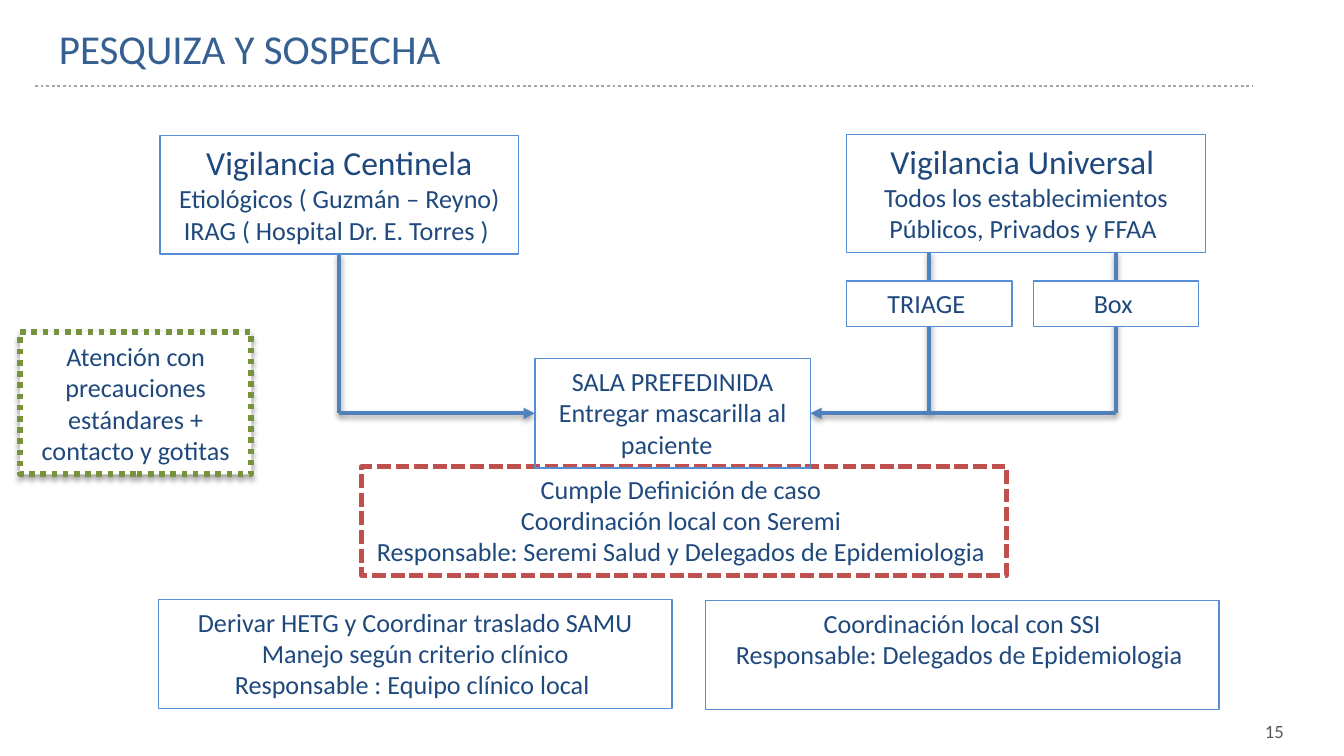
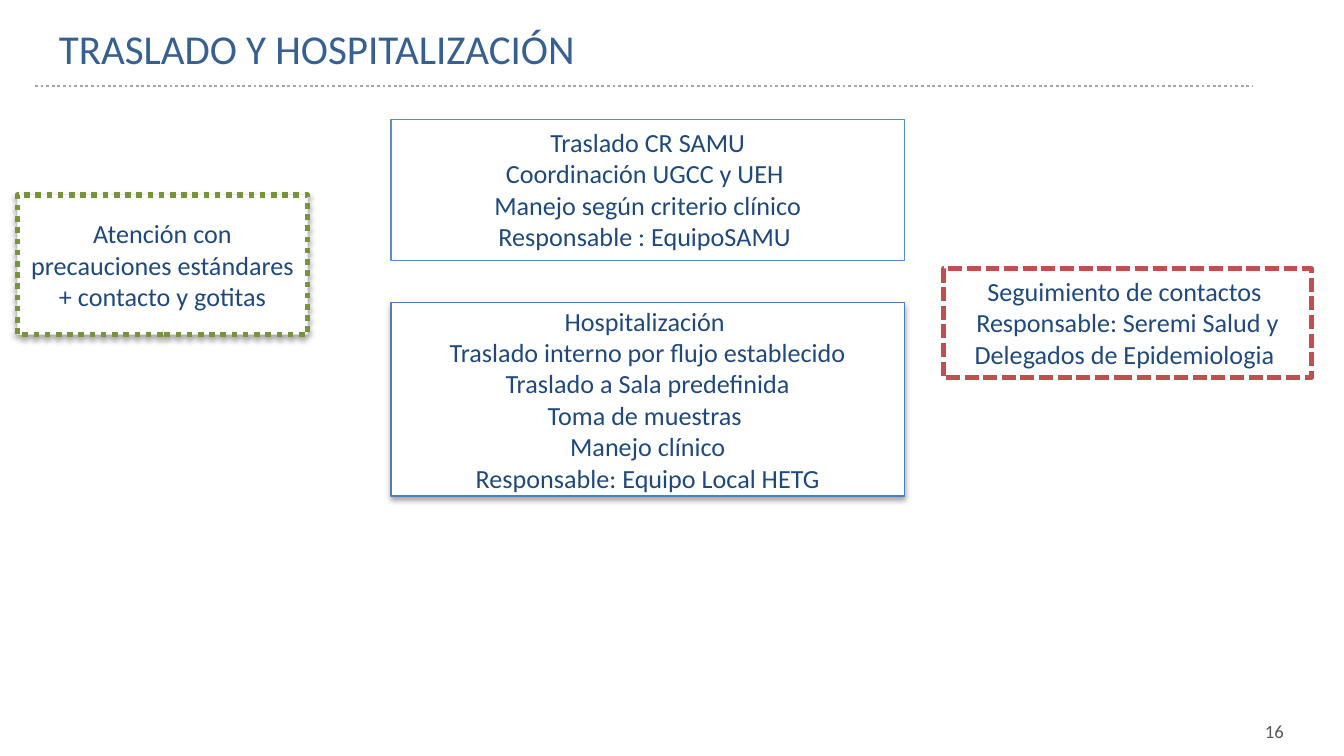
from lxml.etree import SubElement
from pptx import Presentation
from pptx.dml.color import RGBColor
from pptx.enum.dml import MSO_LINE_DASH_STYLE as Dash
from pptx.enum.shapes import MSO_CONNECTOR, MSO_SHAPE
from pptx.enum.text import MSO_ANCHOR as Anchor, PP_ALIGN as Align
from pptx.oxml.ns import qn
from pptx.util import Inches, Pt

WHITE = RGBColor(0xFF, 0xFF, 0xFF)
NAVY = RGBColor(0x1F, 0x49, 0x7D)
TITLE_BLUE = RGBColor(0x37, 0x60, 0x92)
STEP_BLUE = RGBColor(0x55, 0x8E, 0xD5)
WARD_BLUE = RGBColor(0x4B, 0x7E, 0xBC)
FLOW_BLUE = RGBColor(0x4F, 0x81, 0xBD)
GREEN = RGBColor(0x77, 0x93, 0x3C)
RED = RGBColor(0xC0, 0x50, 0x4D)
RULE_GREY = RGBColor(0xA6, 0xA6, 0xA6)
NUMBER_GREY = RGBColor(0x59, 0x59, 0x59)

FONT = "Calibri"
COLUMNS, ROWS = 100, 56.25
UNIT = Inches(10) / COLUMNS
HEAD, BODY = 18, 14
LEADING = 1.22

KINDS = {
    "step": (STEP_BLUE, 0.75, None, None, 0, Anchor.TOP),
    "place": (STEP_BLUE, 0.75, None, WHITE, 0, Anchor.TOP),
    "case": (RED, 2.5, Dash.SQUARE_DOT, None, 0, Anchor.TOP),
    "ward": (WARD_BLUE, 0.75, None, WHITE, 35, Anchor.MIDDLE),
    "care": (GREEN, 3, Dash.ROUND_DOT, WHITE, 35, Anchor.MIDDLE),
}

PRECAUTIONS = ["Atención con precauciones estándares + contacto y gotitas"]
SEREMI = "Responsable: Seremi Salud y Delegados de Epidemiologia "
CLINICAL = "Manejo según criterio clínico"


def text_height(body_lines, head_lines=0):
    points = LEADING * (BODY * body_lines + HEAD * head_lines)
    return 1 + points / 7.2


SURVEILLANCE = text_height(2, 1)
ONE, THREE, FOUR = (text_height(n) for n in (1, 3, 4))

DETECTION = {
    "centinela": ("step", 11.9, 10.1, 26.7, SURVEILLANCE, [
        "Vigilancia Centinela", "Etiológicos ( Guzmán – Reyno)",
        "IRAG ( Hospital Dr. E. Torres ) "]),
    "universal": ("step", 63, 10, 26.7, SURVEILLANCE, [
        "Vigilancia Universal ", "Todos los establecimientos",
        "Públicos, Privados y FFAA "]),
    "caso": ("case", 26.9, 34.7, 48, THREE, [
        "Cumple Definición de caso ", "Coordinación local con Seremi ", SEREMI]),
    "sala": ("step", 39.8, 26.7, 20.5, THREE, [
        "SALA PREFEDINIDA", "Entregar mascarilla al paciente  "]),
    "triage": ("place", 63, 20.9, 12.3, ONE, ["TRIAGE "]),
    "box": ("place", 76.9, 20.9, 12.3, ONE, ["Box "]),
    "derivar": ("step", 11.8, 44.6, 38.2, THREE, [
        "Derivar HETG y Coordinar traslado SAMU", CLINICAL,
        "Responsable : Equipo clínico local "]),
    "ssi": ("step", 52.5, 44.7, 38.2, THREE, [
        "Coordinación local con SSI", "Responsable: Delegados de Epidemiologia "]),
    "atencion": ("care", 1.5, 24.7, 17.2, 10.6, PRECAUTIONS),
}
TRANSFER = {
    "traslado": ("step", 29.1, 8.9, 38.2, FOUR, [
        "Traslado CR SAMU", "Coordinación UGCC y UEH ", CLINICAL,
        "Responsable : EquipoSAMU "]),
    "hospital": ("ward", 29.1, 22.5, 38.2, 14.4, [
        "Hospitalización ", "Traslado interno por flujo establecido",
        "Traslado a Sala predefinida", "Toma de muestras ", "Manejo clínico",
        "Responsable: Equipo Local HETG"]),
    "atencion": ("care", 1.3, 14.5, 21.6, 10.4, PRECAUTIONS),
    "contactos": ("case", 70.2, 20, 27.4, THREE, [
        "Seguimiento de contactos ", SEREMI]),
}
SLIDES = [
    (15, "PESQUIZA Y SOSPECHA", DETECTION),
    (16, "TRASLADO Y HOSPITALIZACIÓN", TRANSFER),
]


def grid(*lengths):
    return [round(length * UNIT) for length in lengths]


def write(shape, paragraphs, size, color, align, anchor):
    frame = shape.text_frame
    frame.word_wrap = True
    frame.vertical_anchor = anchor
    frame.text = "\n".join(paragraphs)
    for paragraph in frame.paragraphs:
        paragraph.alignment = align
        paragraph.font.name = FONT
        paragraph.font.size = Pt(size)
        paragraph.font.color.rgb = color
    return frame


def set_effects(shape, opacity, distance=1.8):
    properties = shape._element.spPr
    effects = properties.find(qn("a:effectLst"))
    if effects is None:
        effects = SubElement(properties, qn("a:effectLst"))
    if opacity:
        shadow = SubElement(effects, qn("a:outerShdw"), blurRad=str(Pt(3.1)),
                            dist=str(Pt(distance)), dir="5400000", rotWithShape="0")
        black = SubElement(shadow, qn("a:srgbClr"), val="000000")
        SubElement(black, qn("a:alpha"), val=str(opacity * 1000))


def add_line(slide, start, end, color, weight, dash=None, arrow=False, opacity=0):
    line = slide.shapes.add_connector(MSO_CONNECTOR.STRAIGHT, *grid(*start, *end))
    line.line.color.rgb = color
    line.line.width = Pt(weight)
    if dash:
        line.line.dash_style = dash
    if arrow:
        SubElement(line.line._get_or_add_ln(), qn("a:tailEnd"), type="triangle")
    set_effects(line, opacity, 1.6)


def add_box(slide, kind, left, top, width, height, paragraphs):
    border, weight, dash, fill, opacity, anchor = KINDS[kind]
    box = slide.shapes.add_shape(MSO_SHAPE.RECTANGLE, *grid(left, top, width, height))
    if fill:
        box.fill.solid()
        box.fill.fore_color.rgb = fill
    else:
        box.fill.background()
    box.line.color.rgb = border
    box.line.width = Pt(weight)
    if dash:
        box.line.dash_style = dash
    box.shadow.inherit = False
    set_effects(box, opacity)
    frame = write(box, paragraphs, BODY, NAVY, Align.CENTER, anchor)
    frame.margin_left = frame.margin_right = Inches(0.09)
    if height == SURVEILLANCE:
        frame.paragraphs[0].font.size = Pt(HEAD)


def add_flow(slide, boxes):
    def center(name):
        return boxes[name][1] + boxes[name][3] / 2

    def bottom(name):
        return boxes[name][2] + boxes[name][4]

    _, left, top, width, height, _ = boxes["sala"]
    level = top + height / 2
    for source, above, side in (("centinela", "centinela", left),
                                ("triage", "universal", None),
                                ("box", "universal", left + width)):
        x = center(source)
        add_line(slide, (x, bottom(above)), (x, level), FLOW_BLUE, 2, opacity=38)
        if side is not None:
            add_line(slide, (x, level), (side, level), FLOW_BLUE, 2,
                     arrow=True, opacity=38)


def add_frame(slide, number, title):
    page = slide.shapes.add_textbox(*grid(92, 53.1, 4.5, 2.7))
    write(page, [str(number)], 10, NUMBER_GREY, Align.RIGHT, Anchor.TOP)
    heading = slide.shapes.add_textbox(*grid(3.4, 0.7, 95.6, 5.7))
    write(heading, [title], 22, TITLE_BLUE, Align.LEFT, Anchor.MIDDLE)
    add_line(slide, (2.6, 6.4), (93.2, 6.4), RULE_GREY, 1.5, Dash.ROUND_DOT)


def main():
    deck = Presentation()
    deck.slide_width, deck.slide_height = grid(COLUMNS, ROWS)
    for number, title, boxes in SLIDES:
        slide = deck.slides.add_slide(deck.slide_layouts[6])
        add_frame(slide, number, title)
        if boxes is DETECTION:
            add_flow(slide, boxes)
        for box in boxes.values():
            add_box(slide, *box)
    deck.save("out.pptx")


if __name__ == "__main__":
    main()
